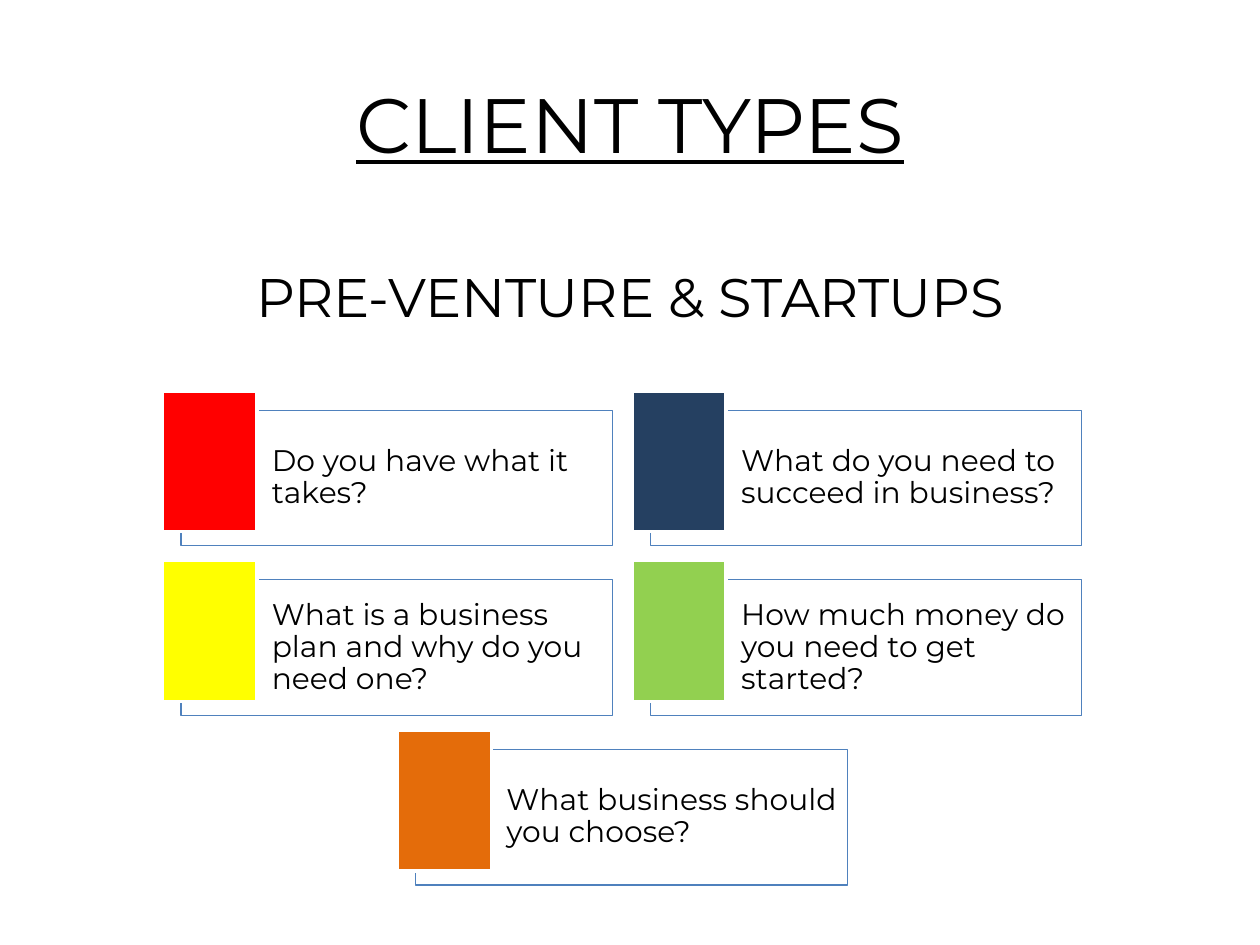
from lxml import etree
from pptx import Presentation
from pptx.dml.color import RGBColor
from pptx.enum import shapes, text
from pptx.oxml import ns
from pptx.util import Cm, Pt

FONT = "Montserrat"
CARDS = [
    ("Do you have what it takes?", "FF0000"),
    ("What do you need to succeed in business?", "254061"),
    ("What is a business plan and why do you need one?", "FFFF00"),
    ("How much money do you need to get started?", "92D050"),
    ("What business should you choose?", "E46C0A"),
]


def paint(color, value):
    color.rgb = RGBColor.from_string(value)


def style(para, size):
    font = para.runs[0].font
    font.name = FONT
    font.size = Pt(size)
    paint(font.color, "000000")
    return font


def block(slide, left, top, width, height, fill, line, weight):
    shape = slide.shapes.add_shape(
        shapes.MSO_SHAPE.RECTANGLE, Cm(left), Cm(top), Cm(width), Cm(height))
    shape.shadow.inherit = False
    shape.fill.solid()
    paint(shape.fill.fore_color, fill)
    paint(shape.line.color, line)
    shape.line.width = Pt(weight)
    return shape


def fade(shape, percent):
    color = shape.fill._xPr.find(ns.qn("a:solidFill"))[0]
    etree.SubElement(color, ns.qn("a:alpha")).set("val", str(percent * 1000))


def title(slide, left, top, width, height):
    box = slide.shapes.add_textbox(Cm(left), Cm(top), Cm(width), Cm(height))
    frame = box.text_frame
    frame.word_wrap = True
    frame.vertical_anchor = text.MSO_ANCHOR.MIDDLE
    frame.text = "CLIENT TYPES\nPRE-VENTURE & STARTUPS"
    head, sub = frame.paragraphs
    for para, size in ((head, 44), (sub, 31)):
        para.alignment = text.PP_ALIGN.CENTER
        style(para, size)
    head.runs[0].font.underline = True
    sub.space_before = Pt(53.6)


def card(slide, left, top, width, height, words, color):
    dx, dy = 0.37, 0.39
    panel = block(slide, left + dx, top + dy, width - dx, height - dy,
                  "FFFFFF", "4F81BD", 0.75)
    fade(panel, 40)
    frame = panel.text_frame
    frame.word_wrap = True
    frame.vertical_anchor = text.MSO_ANCHOR.MIDDLE
    frame.margin_left = Cm(1.83)
    frame.margin_right = frame.margin_top = frame.margin_bottom = Cm(0.18)
    frame.text = words
    para = frame.paragraphs[0]
    para.alignment = text.PP_ALIGN.LEFT
    para.line_spacing = 0.9
    style(para, 17)
    block(slide, left, top, 1.9, height - 0.28, color, "FFFFFF", 2)


def grid(slide, left, top, width, height):
    wide, high = 9.07, 3.12
    across, down = width - wide, (height - high) / 2
    for i, (words, color) in enumerate(CARDS):
        row, col = divmod(i, 2)
        shift = 0.5 if i == len(CARDS) - 1 else col
        card(slide, left + shift * across, top + row * down,
             wide, high, words, color)


def main():
    deck = Presentation()
    deck.slide_width, deck.slide_height = Cm(25.4), Cm(19.05)
    slide = deck.slides.add_slide(deck.slide_layouts[6])
    title(slide, 1.27, 0.76, 22.86, 6.65)
    grid(slide, 3.28, 7.88, 18.53, 9.96)
    deck.save("out.pptx")


if __name__ == "__main__":
    main()
